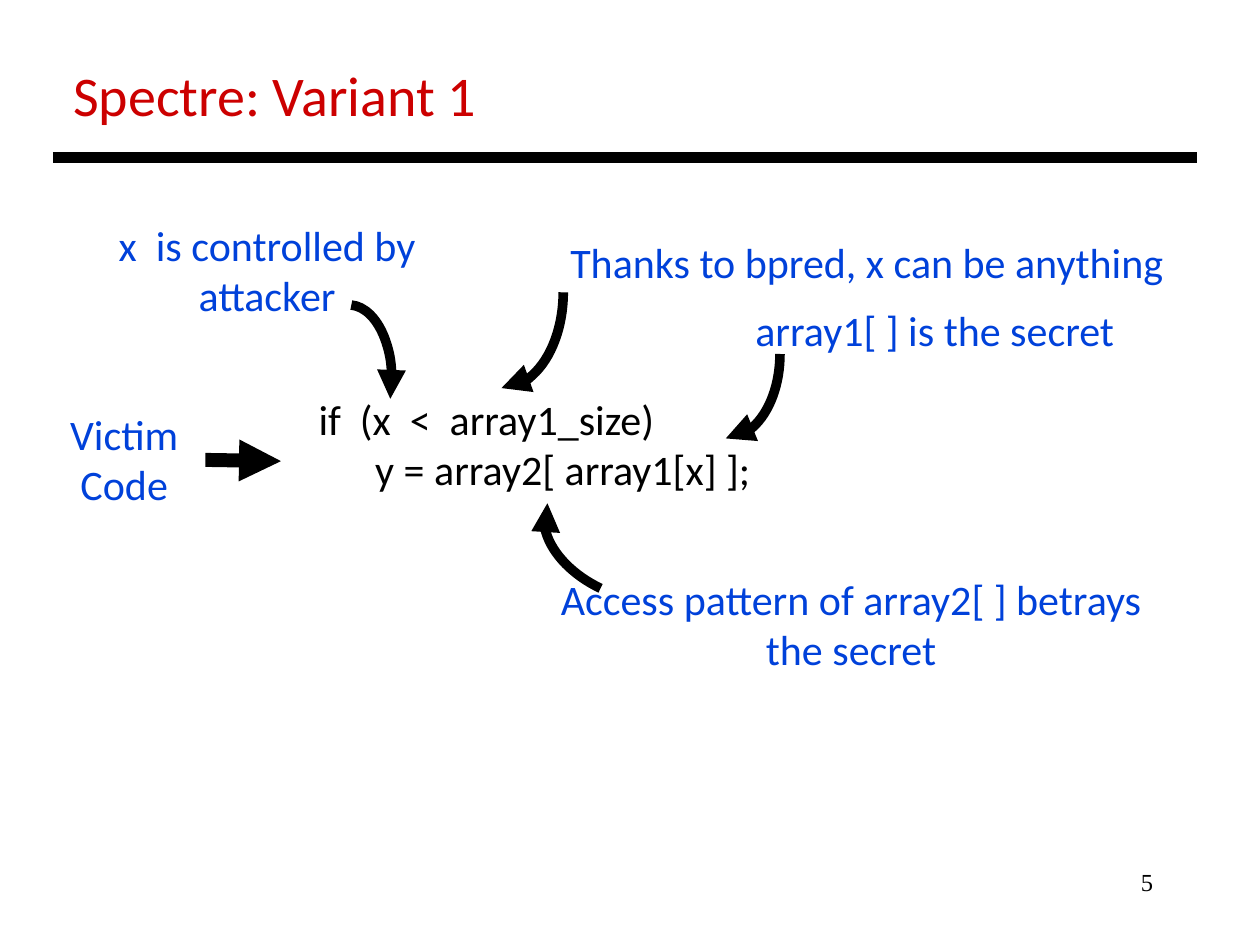
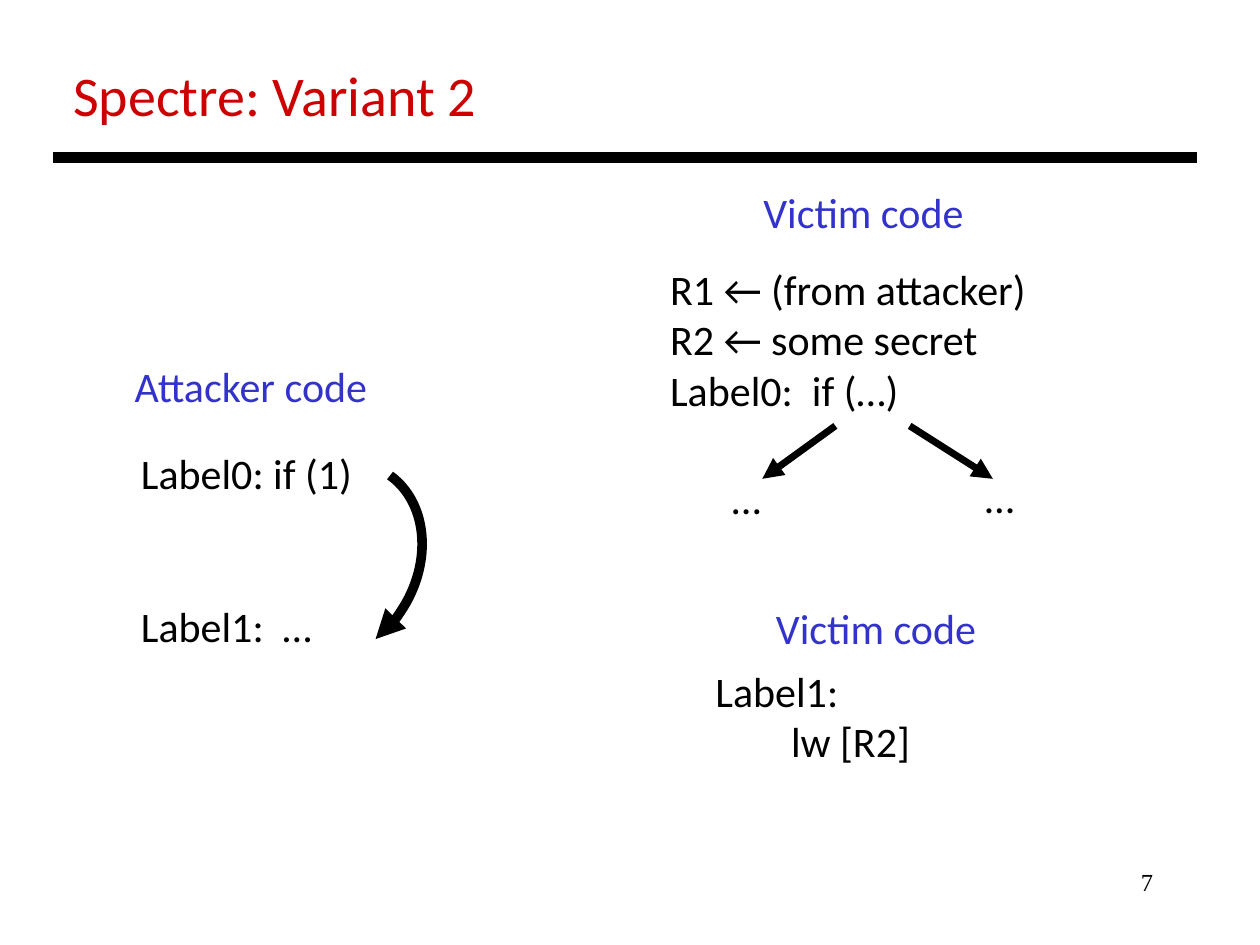
from dataclasses import dataclass
from typing import NamedTuple

from lxml.etree import SubElement
from pptx import Presentation
from pptx.dml.color import RGBColor
from pptx.enum.shapes import MSO_CONNECTOR as Connector, MSO_SHAPE as Preset
from pptx.enum.text import MSO_ANCHOR as Anchor, MSO_AUTO_SIZE as AutoSize, PP_ALIGN as Align
from pptx.oxml.ns import qn
from pptx.util import Inches, Pt

# Shared style: the slide is a grid of 100 columns by 75 rows
CELL = 0.1
COLUMNS, ROWS = 100, 75
BLACK, RED, BLUE, INDIGO = "000000", "CC0000", "0041DA", "3333CC"
SANS, SERIF = "Calibri", "Times New Roman"
TITLE_ONLY = 5
LINE_HEIGHT = 29.3
QUARTER_ARC = (162, 0)
WIDE_ARC = (163.09, 15.18)


class Box(NamedTuple):
    left: float
    top: float
    width: float
    height: float


class Line(NamedTuple):
    text: str
    indent: float = 0  # columns
    space_before: float = 0  # points


@dataclass
class Label:
    """Coloured annotation or black code."""
    lines: list[Line]
    box: Box
    color: str = BLACK
    wrapped: bool = False


@dataclass
class Arrow:
    start: tuple[float, float]
    end: tuple[float, float]
    weight: float


@dataclass
class CurvedArrow:
    box: Box
    rotation: float = 90
    angles: tuple[float, float] = QUARTER_ARC


def grid(*cells: float) -> list[int]:
    return [Inches(cell * CELL) for cell in cells]


def rgb(color: str) -> RGBColor:
    return RGBColor.from_string(color)


def write(frame, lines: list[Line], *, size: float = 24, font: str = SANS,
          color: str = BLACK, align=Align.LEFT, wrap: bool = False,
          fit=AutoSize.SHAPE_TO_FIT_TEXT) -> None:
    frame.word_wrap = wrap
    frame.auto_size = fit
    frame.vertical_anchor = Anchor.TOP
    for number, line in enumerate(lines):
        paragraph = frame.add_paragraph() if number else frame.paragraphs[0]
        paragraph.alignment = align
        if line.space_before:
            paragraph.space_before = Pt(line.space_before)
        if line.indent:
            properties = paragraph._p.get_or_add_pPr()
            properties.set("marL", str(grid(line.indent)[0]))
        run = paragraph.add_run()
        run.text = line.text
        run.font.size = Pt(size)
        run.font.name = font
        run.font.color.rgb = rgb(color)


def stroke(shape, weight: float, arrowhead: bool = True) -> None:
    shape.line.color.rgb = rgb(BLACK)
    shape.line.width = Pt(weight)
    if arrowhead:
        outline = shape._element.spPr.find(qn("a:ln"))
        SubElement(outline, qn("a:tailEnd"), type="triangle")


def draw_label(slide, label: Label) -> None:
    frame = slide.shapes.add_textbox(*grid(*label.box)).text_frame
    write(frame, label.lines, color=label.color, wrap=label.wrapped,
          align=Align.CENTER if label.wrapped else Align.LEFT)


def draw_arrow(slide, arrow: Arrow, arrowhead: bool = True) -> None:
    connector = slide.shapes.add_connector(
        Connector.STRAIGHT, *grid(*arrow.start, *arrow.end))
    stroke(connector, arrow.weight, arrowhead)
    SubElement(connector._element.spPr, qn("a:effectLst"))


def draw_curve(slide, curve: CurvedArrow) -> None:
    arc = slide.shapes.add_shape(Preset.ARC, *grid(*curve.box))
    arc.shadow.inherit = False
    arc.fill.background()
    arc.rotation = curve.rotation
    for index, angle in enumerate(curve.angles):
        arc.adjustments[index] = angle
    stroke(arc, 5.5)


DRAW = {Label: draw_label, Arrow: draw_arrow, CurvedArrow: draw_curve}


def add_variant(deck, heading: str, page: int, parts: list) -> None:
    slide = deck.slides.add_slide(deck.slide_layouts[TITLE_ONLY])

    # Title, rule and page number
    title = slide.shapes.title
    title.left, title.top, title.width, title.height = grid(4.8, 4.3, 34.4, 6.4)
    write(title.text_frame, [Line(heading)], size=32, color=RED)
    draw_arrow(slide, Arrow((4.2, 12.5), (95, 12.5), 6), arrowhead=False)
    footer = slide.shapes.add_textbox(*grid(71.7, 68.3, 20.8, 5))
    write(footer.text_frame, [Line(str(page))], size=14, font=SERIF,
          align=Align.RIGHT, wrap=True, fit=AutoSize.NONE)

    for part in parts:
        DRAW[type(part)](slide, part)


def note(text: str, *box: float) -> Label:
    return Label([Line(text)], Box(*box), BLUE, wrapped=True)


def heading(text: str, *box: float) -> Label:
    return Label([Line(text)], Box(*box), INDIGO)


# Variant 1: victim code with notes
VARIANT_1 = [
    Label([Line("if  (x  <  array1_size)"),
           Line("y = array2[ array1[x] ];", indent=4.5)],
          Box(24.3, 30.7, 36.6, 9.1)),
    note("Victim Code", 3.4, 31.9, 12.9, 9.1),
    Arrow((16.3, 36.5), (22.3, 36.6), 8),
    note("x  is controlled by attacker", 6.5, 16.9, 29.4, 9.1),
    CurvedArrow(Box(24.3, 24.2, 6.8, 11.8), 0, WIDE_ARC),
    note("array1[ ] is the secret", 53, 23.7, 42.4, 5.1),
    CurvedArrow(Box(50.9, 23.8, 13.4, 8.6)),
    note("Access pattern of array2[ ] betrays the secret", 41.7, 45, 51.7, 9.1),
    CurvedArrow(Box(42.8, 38.5, 13.4, 8.6), 205.3),
    note("Thanks to bpred, x can be anything", 33.9, 18.3, 69.8, 5.1),
    CurvedArrow(Box(32.2, 18.3, 15.2, 9.8)),
]

# Variant 2: attacker code and victim code
VARIANT_2 = [
    Label([Line("R1 ← (from attacker)"), Line("R2 ← some secret"),
           Line("Label0:  if (…)")], Box(52.2, 20.4, 30.8, 13.1)),
    Arrow((66.3, 33.8), (60.5, 38), 4),
    Arrow((72.2, 33.8), (78.8, 38), 4),
    Label([Line("…")], Box(57.1, 37, 5.1, 5)),
    Label([Line("…")], Box(77.2, 36.9, 5.1, 5)),
    heading("Victim code", 59.6, 14.3, 18.8, 5),
    heading("Victim code", 60.6, 47.3, 18.8, 5),
    Label([Line("Label1:"), Line("lw [R2]", indent=6)],
          Box(55.8, 52.3, 17.6, 9.1)),
    heading("Attacker code", 9.7, 28.1, 21.5, 5),
    Label([Line("Label0: if (1)"),
           Line("Label1:  …", space_before=2 * LINE_HEIGHT)],
          Box(10.2, 35, 18.9, 17.2)),
    CurvedArrow(Box(19.2, 36.2, 13.8, 16.9), 33.3, WIDE_ARC),
]


def main() -> None:
    deck = Presentation()
    deck.slide_width, deck.slide_height = grid(COLUMNS, ROWS)
    add_variant(deck, "Spectre: Variant 1", 5, VARIANT_1)
    add_variant(deck, "Spectre: Variant 2", 7, VARIANT_2)
    deck.save("out.pptx")


if __name__ == "__main__":
    main()
